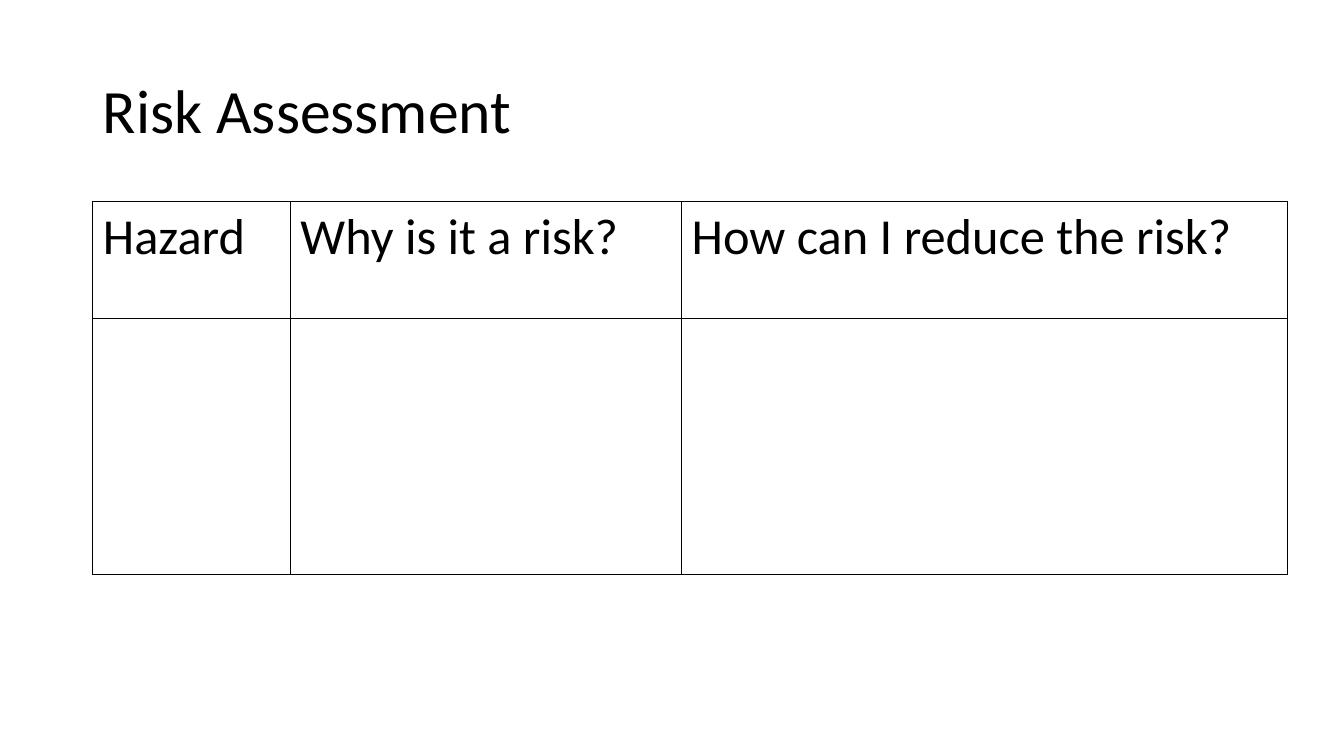
from lxml.etree import SubElement
from pptx import Presentation
from pptx.dml.color import RGBColor
from pptx.enum.text import MSO_ANCHOR
from pptx.oxml.ns import qn
from pptx.util import Inches, Pt

BLACK = RGBColor(0x00, 0x00, 0x00)
FONT = "Calibri"
LEFT = Inches(0.92)
COLUMN_WIDTHS = [1.96, 3.88, 6.01]
ROW_HEIGHTS = [1.16, 2.54]
HEADINGS = ["Hazard", "Why is it a risk?", "How can I reduce the risk?"]


def format_text(paragraph, size):
    paragraph.font.name = FONT
    paragraph.font.size = Pt(size)
    paragraph.font.bold = False
    paragraph.font.color.rgb = BLACK


def add_borders(cell):
    properties = cell._tc.get_or_add_tcPr()
    for side in ("lnL", "lnR", "lnT", "lnB"):
        line = SubElement(properties, qn(f"a:{side}"), w=str(Pt(1)))
        fill = SubElement(line, qn("a:solidFill"))
        SubElement(fill, qn("a:srgbClr"), val=str(BLACK))


presentation = Presentation()
presentation.slide_width = Inches(13.33)
presentation.slide_height = Inches(7.5)
slide = presentation.slides.add_slide(presentation.slide_layouts[5])

title = slide.shapes.title
title.left, title.top = LEFT, Inches(0.4)
title.width, title.height = Inches(11.5), Inches(1.45)
title.text_frame.text = "Risk Assessment"
title.text_frame.vertical_anchor = MSO_ANCHOR.MIDDLE
title_paragraph = title.text_frame.paragraphs[0]
title_paragraph.alignment = 1  # left
title_paragraph.line_spacing = 0.9
format_text(title_paragraph, 44)

table = slide.shapes.add_table(
    len(ROW_HEIGHTS), len(COLUMN_WIDTHS), LEFT, Inches(2),
    Inches(sum(COLUMN_WIDTHS)), Inches(sum(ROW_HEIGHTS))).table
table.first_row = False
table.horz_banding = False
for column, width in zip(table.columns, COLUMN_WIDTHS):
    column.width = Inches(width)
for row, height in zip(table.rows, ROW_HEIGHTS):
    row.height = Inches(height)

for cell, heading in zip(table.rows[0].cells, HEADINGS):
    cell.text = heading
for cell in table.iter_cells():
    add_borders(cell)
    cell.fill.background()
    format_text(cell.text_frame.paragraphs[0], 36)

presentation.save("out.pptx")
